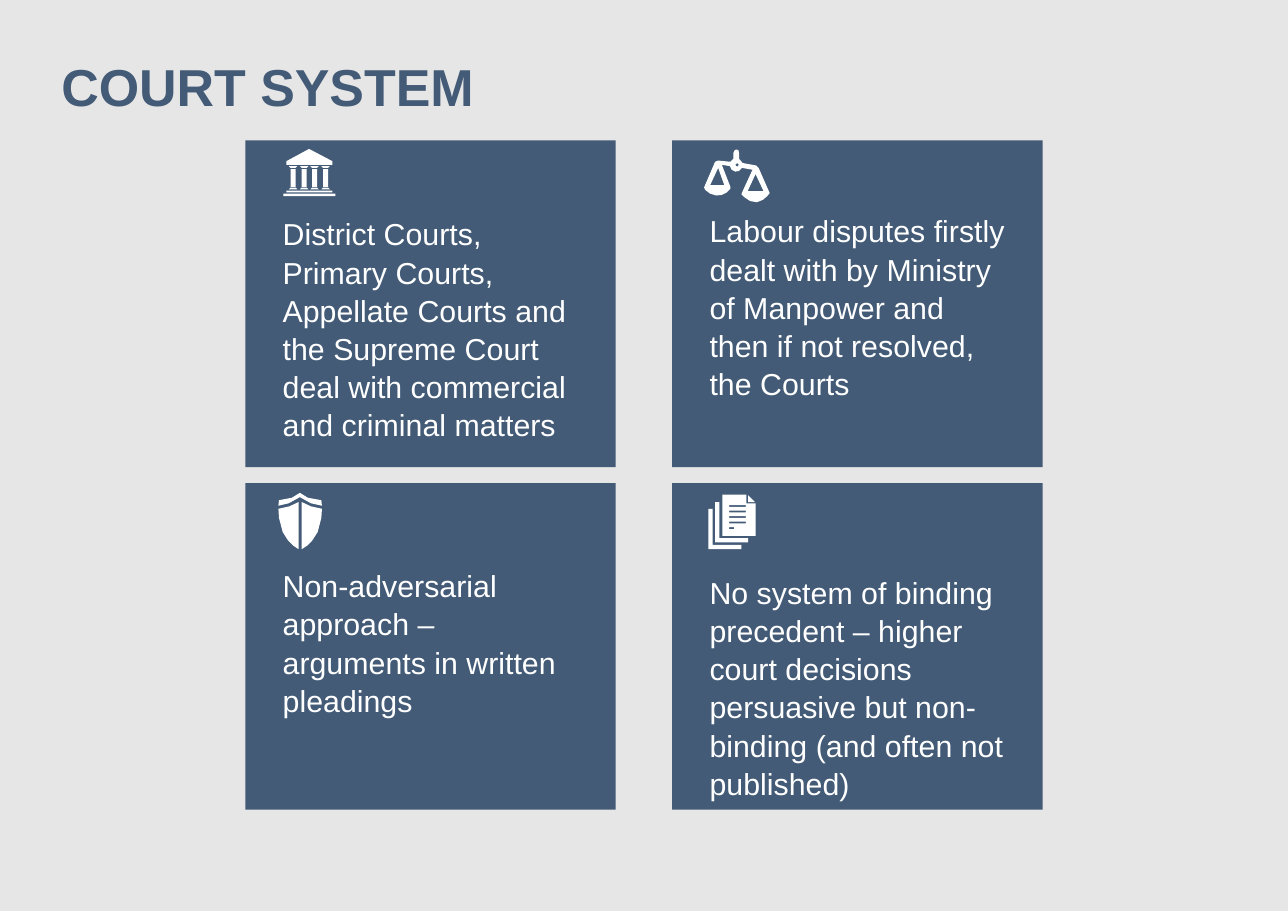
import pptx
import pptx.util
import pptx.dml.color
import pptx.enum.shapes
import pptx.enum.text

Cm = pptx.util.Cm
COLORS = {"background": "E6E6E6", "navy": "435B76", "white": "FFFFFF"}


def paint(shape, color):
    shape.fill.solid()
    shape.fill.fore_color.rgb = pptx.dml.color.RGBColor.from_string(COLORS[color])
    shape.line.fill.background()
    shape.shadow.inherit = False


def draw_icon_part(*contours):
    builder = slide.shapes.build_freeform(*contours[0][0], scale=Cm(0.01))
    builder.add_line_segments(contours[0][1:])
    for contour in contours[1:]:
        builder.move_to(*contour[0])
        builder.add_line_segments(contour[1:])
    paint(builder.convert_to_shape(), "white")


deck = pptx.Presentation()
deck.slide_width = Cm(21)
deck.slide_height = Cm(14.86)
slide = deck.slides.add_slide(deck.slide_layouts[6])
slide.background.fill.solid()
slide.background.fill.fore_color.rgb = pptx.dml.color.RGBColor.from_string(COLORS["background"])

heading = slide.shapes.add_textbox(Cm(1), Cm(1), Cm(19), Cm(1.92)).text_frame
heading.word_wrap = True
heading.margin_left = heading.margin_right = heading.margin_top = heading.margin_bottom = 0
heading.text = "COURT SYSTEM"
heading.paragraphs[0].line_spacing = 0.9
heading_font = heading.paragraphs[0].runs[0].font
heading_font.name = "Arial"
heading_font.size = pptx.util.Pt(24)
heading_font.bold = True
heading_font.color.rgb = pptx.dml.color.RGBColor.from_string(COLORS["navy"])

topics = [
    ("District Courts, Primary Courts, Appellate Courts and the Supreme Court "
     "deal with commercial and criminal matters", 1.2),
    ("Labour disputes firstly dealt with by Ministry of Manpower and then "
     "if not resolved, the Courts", 1.15),
    ("Non-adversarial approach – arguments in written pleadings", 1.35),
    ("No system of binding precedent – higher court decisions persuasive "
     "but non-binding (and often not published)", 1.46),
]
for index, (topic, text_top) in enumerate(topics):
    row, column = divmod(index, 2)
    card = slide.shapes.add_shape(
        pptx.enum.shapes.MSO_SHAPE.RECTANGLE,
        Cm(4 + 6.96 * column), Cm(2.29 + 5.59 * row), Cm(6.04), Cm(5.33))
    paint(card, "navy")
    body = card.text_frame
    body.word_wrap = True
    body.vertical_anchor = pptx.enum.text.MSO_ANCHOR.TOP
    body.margin_left = body.margin_right = Cm(0.61)
    body.margin_top = Cm(text_top)
    body.margin_bottom = Cm(0.13)
    body.text = topic
    paragraph = body.paragraphs[0]
    paragraph.alignment = pptx.enum.text.PP_ALIGN.LEFT
    paragraph.line_spacing = 1.05
    font = paragraph.runs[0].font
    font.name = "Arial"
    font.size = pptx.util.Pt(14)
    font.color.rgb = pptx.dml.color.RGBColor.from_string(COLORS["white"])

draw_icon_part([(504, 243), (542, 263), (542, 269), (467, 269), (467, 263), (504, 243)])
for left, top, right, bottom in [(467, 311, 542, 314), (462, 316, 547, 320)]:
    draw_icon_part([(left, top), (right, top), (right, bottom), (left, bottom), (left, top)])
for column_center in (478, 496, 513, 531):
    for outer, inner, half_outer, half_inner in [(271, 274, 7, 4), (276, 305, 4, 4), (309, 306, 7, 4)]:
        draw_icon_part([
            (column_center - half_outer, outer), (column_center + half_outer, outer),
            (column_center + half_inner, inner), (column_center - half_inner, inner),
            (column_center - half_outer, outer)])

scales_outline = [
    (1171, 262), (1191, 264), (1196, 259), (1196, 249), (1198, 245), (1201, 244),
    (1204, 245), (1205, 249), (1205, 259), (1211, 266), (1233, 270), (1237, 274),
    (1255, 315), (1251, 320), (1244, 326), (1234, 330), (1223, 328), (1214, 322),
    (1209, 317), (1210, 314), (1227, 277), (1210, 274), (1205, 279), (1199, 280),
    (1193, 277), (1190, 271), (1177, 269), (1191, 305), (1191, 308), (1185, 314),
    (1177, 318), (1168, 319), (1158, 316), (1150, 310), (1148, 306), (1166, 264),
    (1171, 262)]
right_pan_gap = [(1245, 312), (1219, 312), (1232, 284), (1245, 312)]
left_pan_gap = [(1171, 274), (1181, 302), (1158, 302), (1171, 274)]
pivot_gap = [(1202, 266), (1205, 269), (1202, 272), (1199, 269), (1202, 266)]
draw_icon_part(scales_outline, right_pan_gap, left_pan_gap, pivot_gap)

shield_rim = [(489, 804), (502, 812), (524, 816), (525, 825), (507, 821), (489, 811),
              (471, 821), (454, 825), (455, 816), (476, 812), (489, 804)]
shield_half = [(487, 819), (472, 826), (454, 830), (455, 845), (461, 868),
               (470, 882), (478, 890), (487, 896), (487, 819)]
draw_icon_part(shield_rim, shield_half, [(979 - x, y) for x, y in shield_half])

front_page = [(1178, 807), (1217, 807), (1217, 821), (1232, 821),
              (1232, 874), (1178, 874), (1178, 807)]
page_lines = []
for line_number, line_end in enumerate([1216, 1216, 1216, 1216, 1197]):
    y = 824 + 9 * line_number
    page_lines.append([(1189, y), (line_end, y), (line_end, y + 3), (1189, y + 3), (1189, y)])
draw_icon_part(front_page, *page_lines)
draw_icon_part([(1220, 808), (1231, 819), (1220, 819), (1220, 808)])
for left, top in [(1155, 830), (1166, 819)]:
    draw_icon_part([(left, top), (left + 7, top), (left + 7, top + 59), (left + 54, top + 59),
                    (left + 54, top + 66), (left, top + 66), (left, top)])

deck.save("out.pptx")
